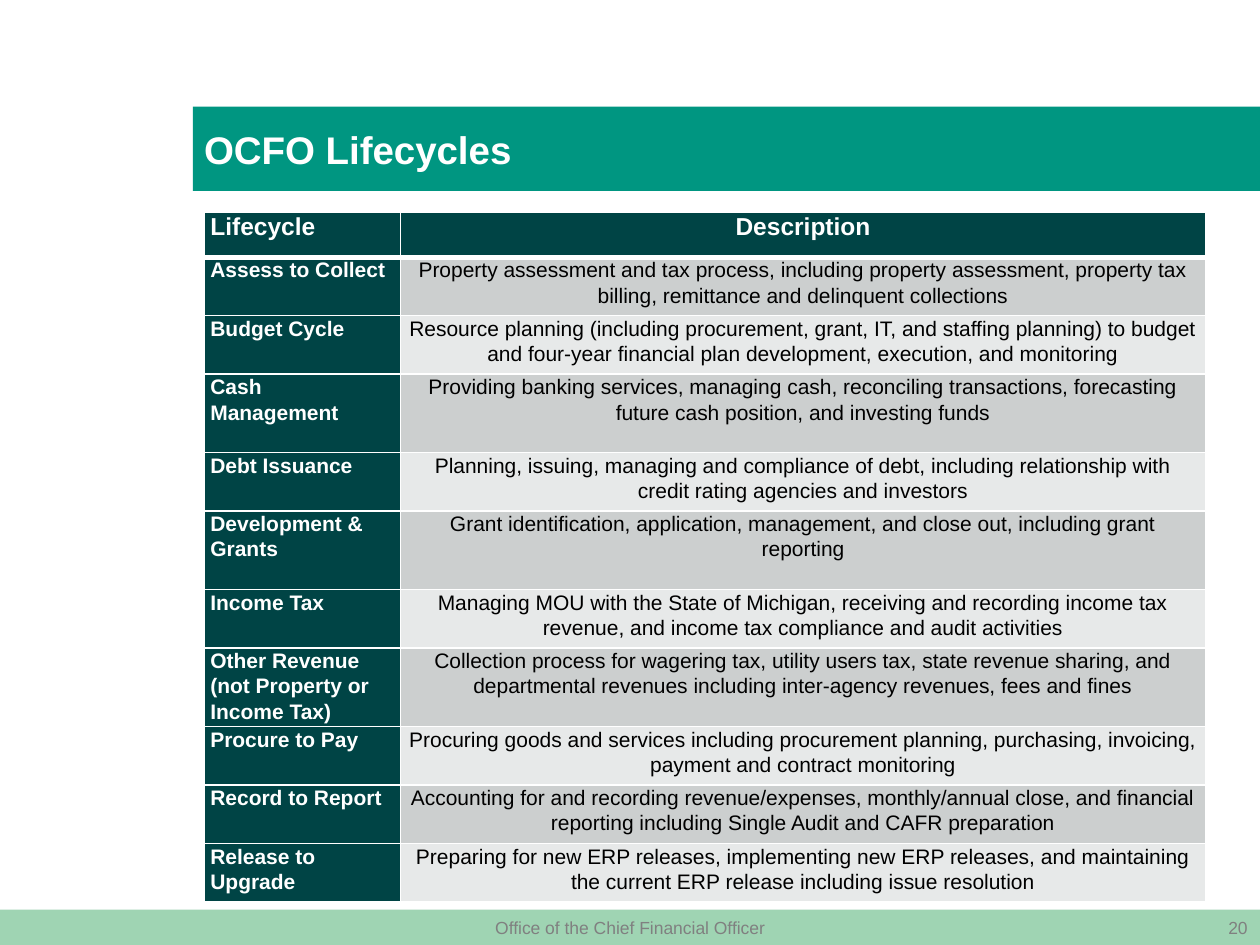
from dataclasses import dataclass
from typing import NamedTuple

from lxml.etree import SubElement as Sub
from pptx import Presentation
from pptx.dml.color import RGBColor as RGB
from pptx.enum.shapes import MSO_SHAPE as Geo
from pptx.enum.text import MSO_ANCHOR as Anchor, PP_ALIGN as Align
from pptx.oxml.ns import qn
from pptx.util import Pt


@dataclass(frozen=True)
class Theme:
    font: str = "Arial"
    white: str = "FFFFFF"
    black: str = "000000"
    gray: str = "808080"
    teal: str = "009681"
    mint: str = "9FD4B3"
    dark: str = "004445"
    bands: tuple = ("CCCFCF", "E7E9E9")
    title: float = 22
    head: float = 14
    body: float = 12
    foot: float = 10


class Box(NamedTuple):
    x: float
    y: float
    w: float
    h: float


class Bar(NamedTuple):
    box: Box
    color: str


class Note(NamedTuple):
    box: Box
    text: str
    align: Align


class Cycle(NamedTuple):
    name: str
    text: str
    height: float = 33.4


THEME = Theme()
TALL = 44.9
HEAD = 26
COLS = (112.3, 460.1)
GRID = Box(116.6, 121, sum(COLS), 393.8)
TITLE = Box(116.6, 72, 519.1, 26.6)

BARS = (
    Bar(Box(110.2, 61, 609.8, 48.2), THEME.teal),
    Bar(Box(0, 519.8, 720, 20.2), THEME.mint),
)
NOTES = (
    Note(Box(558, 519.8, 162, 20.2), "20", Align.RIGHT),
    Note(Box(238.5, 519.8, 243, 20.2), "Office of the Chief Financial Officer", Align.CENTER),
)
CYCLES = (
    Cycle("Assess to Collect", "Property assessment and tax process, including property "
          "assessment, property tax billing, remittance and delinquent collections"),
    Cycle("Budget Cycle", "Resource planning (including procurement, grant, IT, and staffing "
          "planning) to budget and four-year financial plan development, execution, and monitoring"),
    Cycle("Cash Management", "Providing banking services, managing cash, reconciling "
          "transactions, forecasting future cash position, and investing funds", TALL),
    Cycle("Debt Issuance", "Planning, issuing, managing and compliance of debt, including "
          "relationship with credit rating agencies and investors"),
    Cycle("Development & Grants", "Grant identification, application, management, and close "
          "out, including grant reporting", TALL),
    Cycle("Income Tax", "Managing MOU with the State of Michigan, receiving and recording "
          "income tax revenue, and income tax compliance and audit activities"),
    Cycle("Other Revenue (not Property or Income Tax)", "Collection process for wagering tax, "
          "utility users tax, state revenue sharing, and departmental revenues including "
          "inter-agency revenues, fees and fines", TALL),
    Cycle("Procure to Pay", "Procuring goods and services including procurement planning, "
          "purchasing, invoicing, payment and contract monitoring"),
    Cycle("Record to Report", "Accounting for and recording revenue/expenses, monthly/annual "
          "close, and financial reporting including Single Audit and CAFR preparation"),
    Cycle("Release to Upgrade", "Preparing for new ERP releases, implementing new ERP releases, "
          "and maintaining the current ERP release including issue resolution"),
)


def apply(item, form: dict) -> None:
    for key, value in form.items():
        setattr(item, key, value)


def points(box: Box) -> list:
    return [Pt(n) for n in box]


def write(frame, text: str, size: float, color: str, bold: bool = False,
          align: Align = Align.LEFT, space: float = 1.0) -> None:
    frame.text = text
    para = frame.paragraphs[0]
    apply(para, {"alignment": align, "line_spacing": space})
    font = para.runs[0].font
    apply(font, {"name": THEME.font, "size": Pt(size), "bold": bold})
    font.color.rgb = RGB.from_string(color)


def draw_bar(slide, bar: Bar) -> None:
    shape = slide.shapes.add_shape(Geo.RECTANGLE, *points(bar.box))
    shape.shadow.inherit = False
    shape.fill.solid()
    shape.fill.fore_color.rgb = RGB.from_string(bar.color)
    shape.line.fill.background()


def draw_title(slide, text: str) -> None:
    title = slide.shapes.title
    apply(title, dict(zip(("left", "top", "width", "height"), points(TITLE))))
    frame = title.text_frame
    apply(frame, {"margin_left": 0, "margin_right": 0, "margin_top": 0, "margin_bottom": 0,
                  "vertical_anchor": Anchor.MIDDLE, "word_wrap": True})
    write(frame, text, THEME.title, THEME.white, True)
    # Bring the title in front of the bars
    title.element.getparent().append(title.element)


def draw_note(slide, note: Note) -> None:
    frame = slide.shapes.add_textbox(*points(note.box)).text_frame
    apply(frame, {"word_wrap": True, "vertical_anchor": Anchor.MIDDLE})
    write(frame, note.text, THEME.foot, THEME.gray, align=note.align)


def edge(cell, side: str, width: float) -> None:
    line = Sub(cell._tc.get_or_add_tcPr(), qn(f"a:ln{side}"), w=str(Pt(width)))
    Sub(Sub(line, qn("a:solidFill")), qn("a:srgbClr"), val=THEME.white)


def draw_cell(cell, text: str, row: int, col: int) -> None:
    head, data = row == 0, row > 0 and col > 0
    apply(cell, {"margin_left": Pt(3.6), "margin_right": Pt(3.6), "margin_top": 0,
                 "margin_bottom": 0, "vertical_anchor": Anchor.TOP})
    # The rule under the heading row is thicker
    thick = {(0, "B"), (1, "T")}
    for side in "LRTB":
        edge(cell, side, 3 if (row, side) in thick else 1)
    cell.fill.solid()
    fill = THEME.bands[(row - 1) % 2] if data else THEME.dark
    cell.fill.fore_color.rgb = RGB.from_string(fill)
    write(cell.text_frame, text, THEME.head if head else THEME.body,
          THEME.black if data else THEME.white, not data,
          Align.CENTER if col else Align.LEFT, 1.07)


def draw_table(slide) -> None:
    rows = (Cycle("Lifecycle", "Description", HEAD), *CYCLES)
    table = slide.shapes.add_table(len(rows), len(COLS), *points(GRID)).table
    for col, width in zip(table.columns, COLS):
        col.width = Pt(width)
    for r, cycle in enumerate(rows):
        table.rows[r].height = Pt(cycle.height)
        for c, text in enumerate((cycle.name, cycle.text)):
            draw_cell(table.cell(r, c), text, r, c)


def main() -> None:
    deck = Presentation()
    apply(deck, {"slide_width": Pt(720), "slide_height": Pt(540)})
    slide = deck.slides.add_slide(deck.slide_layouts[5])
    # Bands and title
    for bar in BARS:
        draw_bar(slide, bar)
    draw_title(slide, "OCFO Lifecycles")
    # Lifecycle table
    draw_table(slide)
    # Footer
    for note in NOTES:
        draw_note(slide, note)
    deck.save("out.pptx")


if __name__ == "__main__":
    main()
